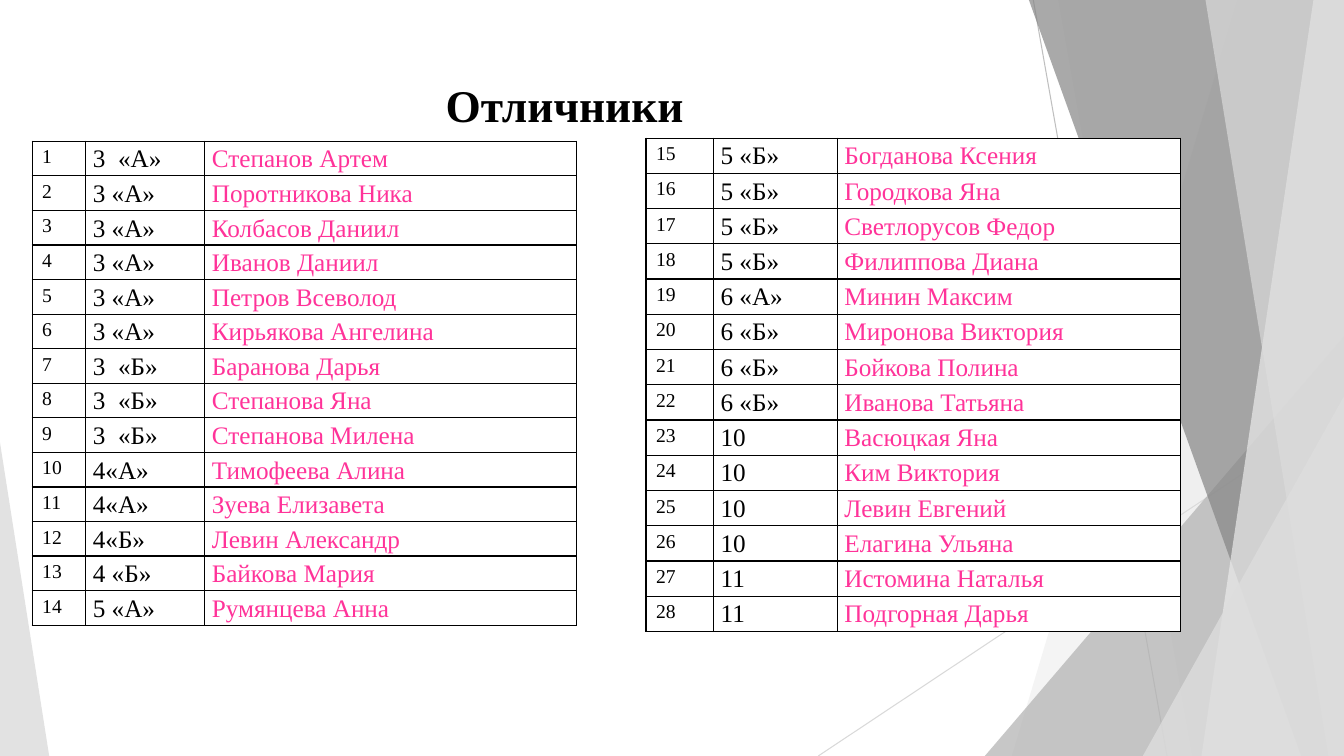
from dataclasses import dataclass

from lxml import etree
from pptx import Presentation
from pptx import util as u
from pptx.dml.color import RGBColor
from pptx.enum import shapes, text
from pptx.oxml.ns import qn

WIDTH, HEIGHT = 33.87, 19.05


@dataclass(frozen=True)
class Theme:
    font: str = "Times New Roman"
    ink: str = "000000"
    paper: str = "FFFFFF"
    accent: str = "FF3399"
    title_size: float = 32.4
    number_size: float = 14
    body_size: float = 18
    border: float = 1
    line_spacing: float = 1.15


class Slide:
    """Holds the theme and the page being filled."""

    def __init__(self, deck, theme):
        self.theme = theme
        self.page = deck.slides.add_slide(deck.slide_layouts[5])

    def line(self, start, end, color):
        points = [u.Cm(value) for value in (*start, *end)]
        line = self.page.shapes.add_connector(shapes.MSO_CONNECTOR.STRAIGHT, *points)
        line.line.color.rgb = RGBColor.from_string(color)
        line.line.width = u.Pt(0.75)
        etree.SubElement(line._element.spPr, qn("a:effectLst"))

    def paint(self, shape, color, opacity):
        shape.shadow.inherit = False
        shape.line.fill.background()
        shape.fill.solid()
        shape.fill.fore_color.rgb = RGBColor.from_string(color)
        tint = shape._element.spPr.find(".//" + qn("a:srgbClr"))
        etree.SubElement(tint, qn("a:alpha"), val=str(opacity * 1000))

    def pane(self, top_x, bottom_x, color, opacity):
        """Full-height facet with a slanted left edge, reaching the right side."""
        builder = self.page.shapes.build_freeform(u.Cm(top_x), 0)
        corners = [(WIDTH, 0), (WIDTH, HEIGHT), (bottom_x, HEIGHT)]
        builder.add_line_segments([(u.Cm(x), u.Cm(y)) for x, y in corners])
        self.paint(builder.convert_to_shape(), color, opacity)

    def triangle(self, left, width, height, apex, color, opacity):
        """Triangle standing on the bottom edge of the page."""
        box = [u.Cm(value) for value in (left, HEIGHT - height, width, height)]
        shape = self.page.shapes.add_shape(shapes.MSO_SHAPE.ISOSCELES_TRIANGLE, *box)
        shape.adjustments[0] = apex
        self.paint(shape, color, opacity)

    def style(self, para, size, color, bold=False):
        for span in para.runs:
            span.font.name = self.theme.font
            span.font.size = u.Pt(size)
            span.font.bold = bold
            span.font.color.rgb = RGBColor.from_string(color)

    def title(self, words, left, top, width, height, indent):
        box = self.page.shapes.title
        self.page.shapes._spTree.append(box._element)  # above the backdrop
        box.left, box.top = u.Cm(left), u.Cm(top)
        box.width, box.height = u.Cm(width), u.Cm(height)
        frame = box.text_frame
        frame.text = words
        frame.auto_size = text.MSO_AUTO_SIZE.NONE
        frame.vertical_anchor = text.MSO_ANCHOR.TOP
        frame.margin_left, frame.margin_top = u.Cm(indent), u.Cm(0.25)
        frame.paragraphs[0].alignment = text.PP_ALIGN.LEFT
        self.style(frame.paragraphs[0], self.theme.title_size, self.theme.ink, True)

    def cell(self, cell, words, column):
        theme = self.theme
        cell.text_frame.text = words
        para = cell.text_frame.paragraphs[0]
        if column:
            cell.margin_left = cell.margin_right = u.Cm(0.18)
            cell.margin_top = cell.margin_bottom = 0
            para.line_spacing = theme.line_spacing
        size = theme.body_size if column else theme.number_size
        self.style(para, size, theme.accent if column == 2 else theme.ink)
        # Borders come before the fill in the cell properties
        properties = cell._tc.get_or_add_tcPr()
        for side in ("lnL", "lnR", "lnT", "lnB"):
            edge = etree.SubElement(properties, qn("a:" + side), w=str(u.Pt(theme.border)))
            fill = etree.SubElement(edge, qn("a:solidFill"))
            etree.SubElement(fill, qn("a:srgbClr"), val=theme.ink)
        cell.fill.solid()
        cell.fill.fore_color.rgb = RGBColor.from_string(theme.paper)

    def table(self, pupils, first, left, top, widths, height):
        box = [u.Cm(value) for value in (left, top, sum(widths), height)]
        table = self.page.shapes.add_table(len(pupils), len(widths), *box).table
        table.first_row = table.horz_banding = False
        for column, width in zip(table.columns, widths):
            column.width = u.Cm(width)
        for row, (group, name) in enumerate(pupils):
            table.rows[row].height = u.Cm(height / len(pupils))
            for column, words in enumerate((str(first + row), group, name)):
                self.cell(table.cell(row, column), words, column)


PUPILS = [
    ("3  «А»", "Степанов Артем"),
    ("3 «А»", "Поротникова Ника"),
    ("3 «А»", "Колбасов Даниил"),
    ("3 «А»", "Иванов Даниил"),
    ("3 «А»", "Петров Всеволод"),
    ("3 «А»", "Кирьякова Ангелина"),
    ("3  «Б»", "Баранова Дарья"),
    ("3  «Б»", "Степанова Яна"),
    ("3  «Б»", "Степанова Милена"),
    ("4«А»", "Тимофеева Алина"),
    ("4«А»", "Зуева Елизавета"),
    ("4«Б»", "Левин Александр"),
    ("4 «Б»", "Байкова Мария"),
    ("5 «А»", "Румянцева Анна"),
    ("5 «Б»", "Богданова Ксения"),
    ("5 «Б»", "Городкова Яна"),
    ("5 «Б»", "Светлорусов Федор"),
    ("5 «Б»", "Филиппова Диана"),
    ("6 «А»", "Минин Максим"),
    ("6 «Б»", "Миронова Виктория"),
    ("6 «Б»", "Бойкова Полина"),
    ("6 «Б»", "Иванова Татьяна"),
    ("10", "Васюцкая Яна"),
    ("10", "Ким Виктория"),
    ("10", "Левин Евгений"),
    ("10", "Елагина Ульяна"),
    ("11", "Истомина Наталья"),
    ("11", "Подгорная Дарья"),
]


def main():
    deck = Presentation()
    deck.slide_width, deck.slide_height = u.Cm(WIDTH), u.Cm(HEIGHT)
    slide = Slide(deck, Theme())

    # Faceted backdrop
    slide.line((26.04, 0), (29.41, HEIGHT), "BFBFBF")
    slide.line((WIDTH, 10.24), (20.62, HEIGHT), "D9D9D9")
    slide.pane(31.19, 25.5, "DDDDDD", 30)
    slide.pane(26.67, 30.05, "DDDDDD", 20)
    slide.triangle(24.82, 9.05, 10.58, 1, "B2B2B2", 72)
    slide.pane(25.93, 32.79, "858585", 70)
    slide.pane(33.1, 30.28, "EBEBEB", 70)
    slide.pane(30.38, 33.48, "DDDDDD", 65)
    slide.triangle(28.8, 5.07, 9.07, 1, "DDDDDD", 80)
    slide.triangle(0, 1.24, 7.9, 0, "DDDDDD", 85)

    # Heading
    slide.title("Отличники", 1.88, 1.7, 30.02, 1.45, indent=9.35)

    # Two halves of the list
    half = len(PUPILS) // 2
    slide.table(PUPILS[:half], 1, 0.81, 3.56, (1.35, 3, 9.37), 12.2)
    slide.table(PUPILS[half:], half + 1, 16.28, 3.48, (1.7, 3.12, 8.64), 12.44)

    deck.save("out.pptx")


if __name__ == "__main__":
    main()
